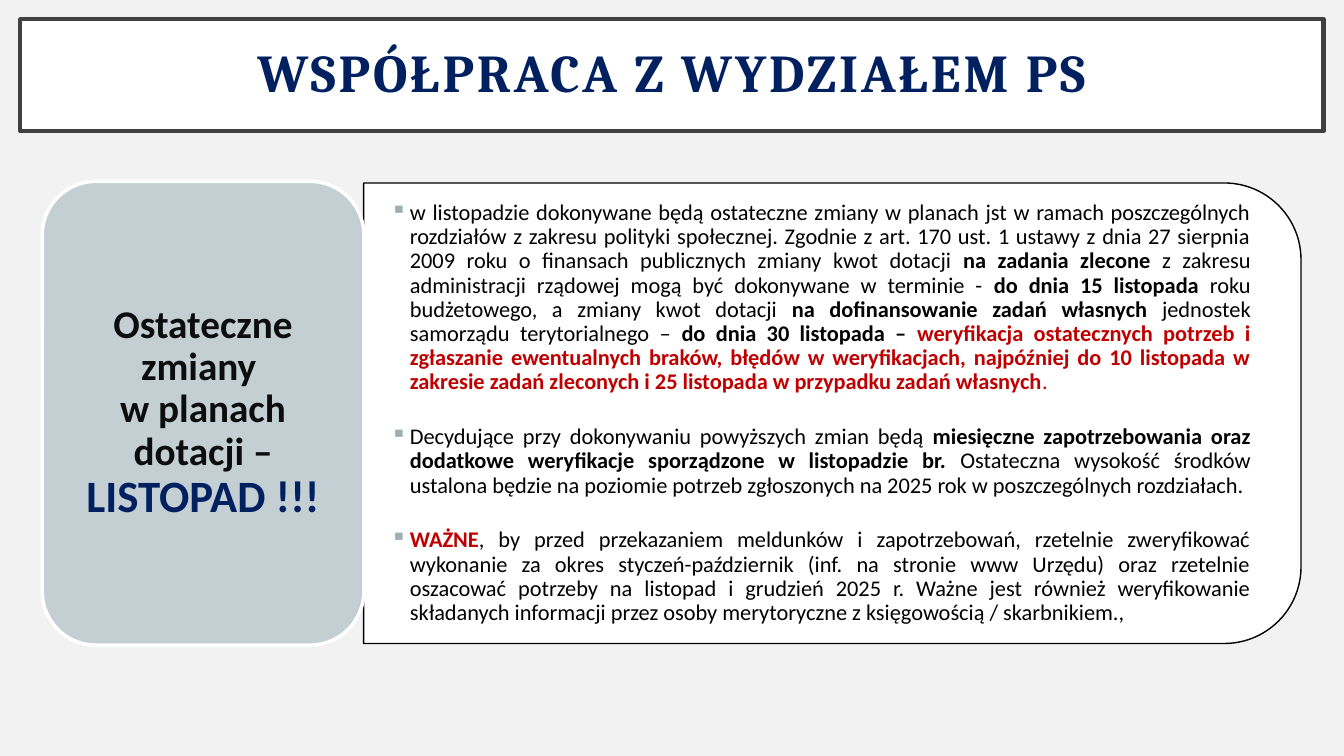
from lxml import etree
from pptx import Presentation
from pptx.dml.color import RGBColor
from pptx.enum.shapes import MSO_SHAPE
from pptx.enum.text import MSO_ANCHOR, MSO_AUTO_SIZE, PP_ALIGN
from pptx.oxml.ns import qn
from pptx.util import Pt

ROUND, TAB = MSO_SHAPE.ROUNDED_RECTANGLE, MSO_SHAPE.ROUND_2_SAME_RECTANGLE
MIDDLE, NO_FIT = MSO_ANCHOR.MIDDLE, MSO_AUTO_SIZE.NONE
CENTER, JUSTIFY = PP_ALIGN.CENTER, PP_ALIGN.JUSTIFY
WHITE, BLACK, NAVY, RED = "FFFFFF", "000000", "002060", "C00000"

TITLE = "WSPÓŁPRACA Z WYDZIAŁEM PS"
# Each run: text, bold, colour
POINTS = [
    [("w listopadzie dokonywane będą ostateczne zmiany w planach jst w ramach "
      "poszczególnych rozdziałów z zakresu polityki społecznej. Zgodnie z art. 170 "
      "ust. 1 ustawy z dnia 27 sierpnia 2009 roku o finansach publicznych zmiany "
      "kwot dotacji ", False, BLACK),
     ("na zadania zlecone ", True, BLACK),
     ("z zakresu administracji rządowej mogą być dokonywane w terminie - ", False, BLACK),
     ("do dnia 15 listopada ", True, BLACK),
     ("roku budżetowego, a zmiany kwot dotacji ", False, BLACK),
     ("na dofinansowanie zadań własnych ", True, BLACK),
     ("jednostek samorządu terytorialnego – ", False, BLACK),
     ("do dnia 30 listopada – ", True, BLACK),
     ("weryfikacja ostatecznych potrzeb i zgłaszanie ewentualnych braków, błędów w "
      "weryfikacjach, najpóźniej do 10 listopada w zakresie zadań zleconych i 25 "
      "listopada w przypadku zadań własnych", True, RED),
     (".", False, RED)],
    [("Decydujące przy dokonywaniu powyższych zmian będą ", False, BLACK),
     ("miesięczne zapotrzebowania oraz dodatkowe weryfikacje sporządzone w "
      "listopadzie br. ", True, BLACK),
     ("Ostateczna wysokość środków ustalona będzie na poziomie potrzeb zgłoszonych "
      "na 2025 rok w poszczególnych rozdziałach. ", False, BLACK)],
    [("WAŻNE", True, RED),
     (", by przed przekazaniem meldunków i zapotrzebowań, rzetelnie zweryfikować "
      "wykonanie za okres styczeń-październik (inf. na stronie www Urzędu) oraz "
      "rzetelnie oszacować potrzeby na listopad i grudzień 2025 r. Ważne jest również "
      "weryfikowanie składanych informacji przez osoby merytoryczne z księgowością / "
      "skarbnikiem.,", False, BLACK)],
]


def color(text):
    return RGBColor.from_string(text)


def paint(shape, fill, line, width):
    shape.fill.solid()
    shape.fill.fore_color.rgb = color(fill)
    shape.line.color.rgb = color(line)
    shape.line.width = Pt(width)
    shape.shadow.inherit = False


def place(shape, box):
    shape.left, shape.top, shape.width, shape.height = map(Pt, box)


def set_frame(shape, side, edge):
    frame = shape.text_frame
    frame.word_wrap, frame.auto_size = True, NO_FIT
    frame.vertical_anchor = MIDDLE
    frame.margin_left = frame.margin_right = Pt(side)
    frame.margin_top = frame.margin_bottom = Pt(edge)
    return frame


def set_para(para, align, font):
    para.alignment, para.line_spacing = align, 0.9
    para.font.name = font


def add_run(para, text, tint):
    run = para.add_run()
    run.text = text
    run.font.color.rgb = color(tint)
    return run


def add_bullet(para, indent):
    props = para._p.get_or_add_pPr()
    props.set("marL", str(Pt(indent)))
    props.set("indent", str(-Pt(indent)))
    tint = etree.SubElement(props, qn("a:buClr"))
    etree.SubElement(tint, qn("a:srgbClr"), val="9BAFB5")
    etree.SubElement(props, qn("a:buChar"), char="▪")


# Framed heading
def add_title(slide, box):
    title = slide.shapes.title
    place(title, box)
    paint(title, WHITE, "404040", 3)
    para = set_frame(title, 21.6, 14.4).paragraphs[0]
    set_para(para, CENTER, "Cambria")
    para.font.size, para.font.bold = Pt(38), True
    run = add_run(para, TITLE, NAVY)
    run._r.get_or_add_rPr().set("spc", "200")


# White panel, rounded on the right, with the bullet list
def add_panel(slide, box):
    left, top, width, height = box
    panel = slide.shapes.add_shape(TAB, 0, 0, 0, 0)
    shift = (width - height) / 2
    place(panel, (left + shift, top - shift, height, width))
    panel.rotation = 90
    paint(panel, WHITE, BLACK, 1)

    body = slide.shapes.add_textbox(0, 0, 0, 0)
    place(body, (left, top + 16, width - 16.5, height - 32))
    frame = set_frame(body, 19.4, 10.1)
    for i, runs in enumerate(POINTS):
        para = frame.add_paragraph() if i else frame.paragraphs[0]
        add_bullet(para, 13.7)
        set_para(para, JUSTIFY, "Calibri")
        para.font.size = Pt(16)
        if i < len(POINTS) - 1:
            para.space_after = Pt(22)
        for text, bold, tint in runs:
            add_run(para, text, tint).font.bold = bold


# Rounded label on the left
def add_label(slide, box):
    label = slide.shapes.add_shape(ROUND, 0, 0, 0, 0)
    place(label, box)
    paint(label, "C3CFD3", WHITE, 2.5)
    para = set_frame(label, 8.6, 4.3).paragraphs[0]
    set_para(para, CENTER, "Calibri")
    para.font.bold = True
    add_run(para, "Ostateczne zmiany ", "0D0D0D").font.size = Pt(28)
    para.add_line_break()
    add_run(para, "w planach dotacji – ", "0D0D0D").font.size = Pt(28)
    add_run(para, "LISTOPAD !!!", NAVY).font.size = Pt(32)


def main():
    deck = Presentation()
    deck.slide_width, deck.slide_height = Pt(960), Pt(540)
    slide = deck.slides.add_slide(deck.slide_layouts[5])
    back = slide.background.fill
    back.solid()
    back.fore_color.rgb = color("F2F2F2")
    add_title(slide, (14.4, 13.7, 931, 80))
    add_panel(slide, (259.7, 130.7, 669.6, 329))
    add_label(slide, (30.2, 129.6, 229.7, 331.2))
    deck.save("out.pptx")


if __name__ == "__main__":
    main()
